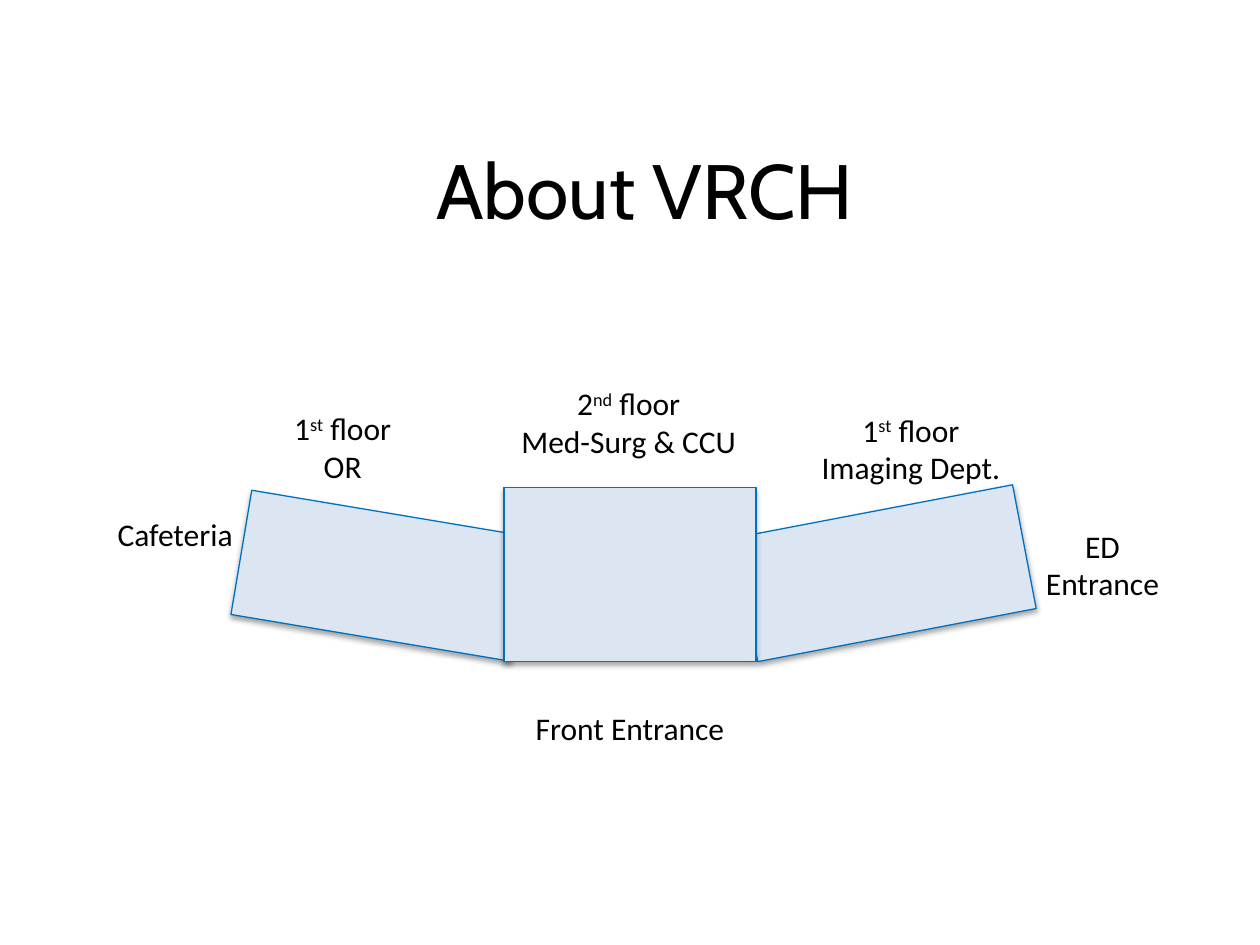
from pptx import Presentation
from pptx.dml.color import RGBColor
from pptx.enum.shapes import MSO_SHAPE
from pptx.enum.text import MSO_ANCHOR, MSO_AUTO_SIZE, PP_ALIGN
from pptx.oxml import parse_xml
from pptx.oxml.ns import nsdecls, qn
from pptx.util import Inches, Pt

WING_SIZE = (2.25, 1)
# left, top, width, height, rotation; the main block covers the wing ends
BUILDINGS = [
    (5.9, 4.05, *WING_SIZE, -10.8),
    (1.9, 4.07, *WING_SIZE, 9.5),
    (4, 3.87, 2, 1.38, 0),
]
# left, top, width, lines; text between carets is superscript
LABELS = [
    (4, 5.58, 2, ["Front Entrance"]),
    (8, 4.13, 1.5, ["ED", "Entrance"]),
    (0.39, 4.04, 2, ["Cafeteria"]),
    (6.23, 3.21, 2, ["1^st^ floor", "Imaging Dept."]),
    (3.99, 3, 2, ["2^nd^ floor", "Med-Surg & CCU"]),
    (1.72, 3.2, 2, ["1^st^ floor", "OR"]),
]


def rgb(color):
    return RGBColor.from_string(color)


def format_run(r, font, size):
    r.font.name = font
    r.font.size = Pt(size)
    r.font.color.rgb = rgb("000000")


def set_title(s, text):
    sp = s.shapes.title
    sp.left, sp.top = Inches(3.33), Inches(1.08)
    sp.width, sp.height = Inches(3.58), Inches(0.84)
    tf = sp.text_frame
    tf.text = text
    tf.word_wrap = False
    tf.auto_size = MSO_AUTO_SIZE.NONE
    tf.vertical_anchor = MSO_ANCHOR.TOP
    p = tf.paragraphs[0]
    p.alignment = PP_ALIGN.CENTER
    format_run(p.runs[0], "Cabin", 44)


def add_shadow(sp):
    sp.shadow.inherit = False
    effects = sp._element.spPr.find(qn("a:effectLst"))
    effects.append(parse_xml(
        f'<a:outerShdw {nsdecls("a")} blurRad="{Pt(3.1)}" dist="{Pt(1.8)}" '
        'dir="5400000" rotWithShape="0"><a:srgbClr val="000000">'
        '<a:alpha val="35000"/></a:srgbClr></a:outerShdw>'))


def add_building(s, left, top, width, height, rotation):
    sp = s.shapes.add_shape(MSO_SHAPE.RECTANGLE, Inches(left), Inches(top),
                            Inches(width), Inches(height))
    sp.rotation = rotation
    sp.fill.solid()
    sp.fill.fore_color.rgb = rgb("DCE6F2")
    sp.line.color.rgb = rgb("0070C0")
    sp.line.width = Pt(0.75)
    add_shadow(sp)


def add_label(s, left, top, width, lines):
    height = 0.42 if len(lines) == 1 else 0.71
    sp = s.shapes.add_textbox(Inches(left), Inches(top),
                              Inches(width), Inches(height))
    tf = sp.text_frame
    tf.word_wrap = True
    for i, line in enumerate(lines):
        p = tf.add_paragraph() if i else tf.paragraphs[0]
        p.alignment = PP_ALIGN.CENTER
        for j, part in enumerate(line.split("^")):
            r = p.add_run()
            r.text = part
            format_run(r, "Calibri", 18)
            if j % 2:
                r._r.get_or_add_rPr().set("baseline", "30000")


def main():
    prs = Presentation()
    prs.slide_width, prs.slide_height = Inches(10), Inches(7.5)
    s = prs.slides.add_slide(prs.slide_layouts[5])
    set_title(s, "About VRCH")
    for building in BUILDINGS:
        add_building(s, *building)
    for label in LABELS:
        add_label(s, *label)
    prs.save("out.pptx")


if __name__ == "__main__":
    main()
